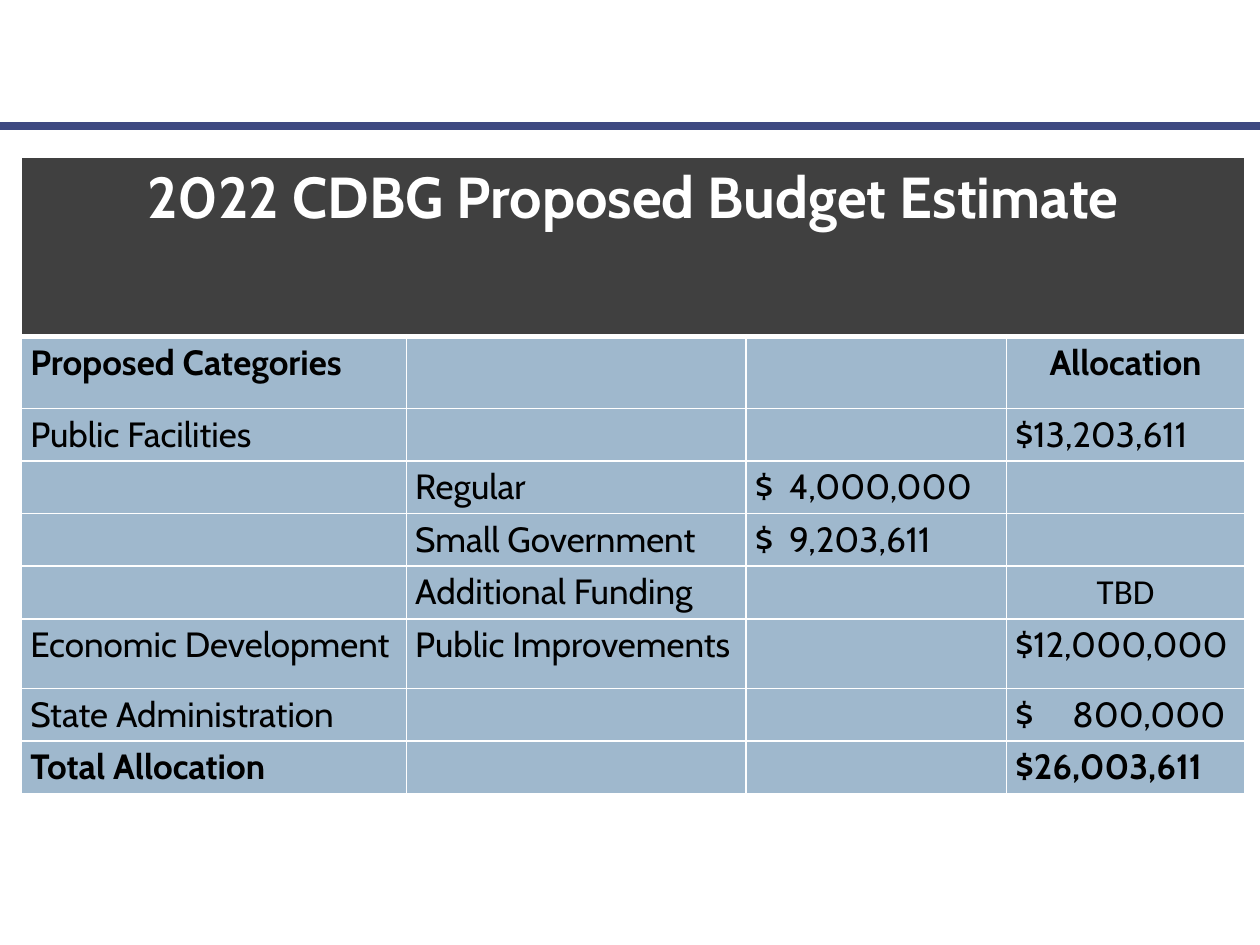
from typing import NamedTuple

from lxml import etree
from pptx import Presentation, util as u
from pptx.dml.color import RGBColor
from pptx.enum import shapes, text
from pptx.oxml.ns import qn

WHITE, BLACK, DARK, BLUE, NAVY = "FFFFFF", "000000", "404040", "9FB8CD", "3E4981"
MID = text.PP_ALIGN.CENTER


class Item(NamedTuple):
    words: str
    bold: bool = False
    align: text.PP_ALIGN = text.PP_ALIGN.LEFT
    font: str = "Cabin"
    size: int = 20
    color: str = BLACK
    tab: float = 0  # tab stop in cm


class Row(NamedTuple):
    high: float
    items: dict[int, Item]  # keyed by column


COLS = [7.76, 6.85, 5.25, 4.8]
LOW = 1.04
ROWS = [
    Row(3.6, {0: Item("2022 CDBG Proposed Budget Estimate", True, MID,
                      size=33, color=WHITE)}),
    Row(1.45, {0: Item("Proposed Categories", True),
               3: Item("Allocation", True, MID)}),
    Row(LOW, {0: Item("Public Facilities"), 3: Item("$13,203,611")}),
    Row(LOW, {1: Item("Regular"), 2: Item("$\t4,000,000", tab=0.69)}),
    Row(LOW, {1: Item("Small Government"), 2: Item("$\t9,203,611", tab=0.69)}),
    Row(1, {1: Item("Additional Funding"),
            3: Item("TBD", align=MID, font="Calibri")}),
    Row(1.4, {0: Item("Economic Development"), 1: Item("Public Improvements"),
              3: Item("$12,000,000")}),
    Row(LOW, {0: Item("State Administration"),
              3: Item("$\t800,000", tab=1.15)}),
    Row(LOW, {0: Item("Total Allocation", True), 3: Item("$26,003,611", True)}),
]


def paint(code: str) -> RGBColor:
    return RGBColor.from_string(code)


def write(frame, words: str, *, bold: bool, align, font: str, size: int,
          color: str, tab: float) -> None:
    para = frame.paragraphs[0]
    para.alignment = align
    if tab:
        stops = etree.SubElement(para._p.get_or_add_pPr(), qn("a:tabLst"))
        etree.SubElement(stops, qn("a:tab"), pos=str(u.Cm(tab)), algn="l")
    run = para.add_run()
    run.text = words
    face = run.font
    face.name, face.size, face.bold = font, u.Pt(size), bold
    face.color.rgb = paint(color)


def edge(cell, side: str, width: float) -> None:
    line = etree.SubElement(cell._tc.get_or_add_tcPr(), qn(f"a:ln{side}"),
                            w=str(u.Pt(width)))
    fill = etree.SubElement(line, qn("a:solidFill"))
    etree.SubElement(fill, qn("a:srgbClr"), val=WHITE)


def style(cell, row: int) -> None:
    cell.margin_left = cell.margin_right = u.Cm(0.18)
    cell.margin_top = cell.margin_bottom = u.Cm(0.1)
    # A thick rule parts the title from the body
    thick = {(0, "B"), (1, "T")}
    for side in "LRTB":
        edge(cell, side, 3 if (row, side) in thick else 1)
    cell.fill.solid()
    cell.fill.fore_color.rgb = paint(BLUE if row else DARK)


def rule(slide, top: float, wide: float) -> None:
    line = slide.shapes.add_connector(
        shapes.MSO_CONNECTOR.STRAIGHT, 0, u.Cm(top), u.Cm(wide), u.Cm(top))
    line.line.color.rgb = paint(NAVY)
    line.line.width = u.Pt(4.5)
    etree.SubElement(line._element.spPr, qn("a:effectLst"))


def budget(slide, left: float, top: float) -> None:
    high = sum(row.high for row in ROWS)
    table = slide.shapes.add_table(
        len(ROWS), len(COLS), u.Cm(left), u.Cm(top),
        u.Cm(sum(COLS)), u.Cm(high)).table
    table.first_row = table.horz_banding = False
    for col, wide in zip(table.columns, COLS):
        col.width = u.Cm(wide)
    for r, row in enumerate(ROWS):
        table.rows[r].height = u.Cm(row.high)
        for c in range(len(COLS)):
            cell = table.cell(r, c)
            style(cell, r)
            if c in row.items:
                write(cell.text_frame, **row.items[c]._asdict())
    table.cell(0, 0).merge(table.cell(0, len(COLS) - 1))


def main() -> None:
    deck = Presentation()
    deck.slide_width, deck.slide_height = u.Cm(25.4), u.Cm(19.05)
    slide = deck.slides.add_slide(deck.slide_layouts[6])
    # Header rule
    rule(slide, 2.54, 25.4)
    # Budget table
    budget(slide, 0.43, 3.18)
    deck.save("out.pptx")


if __name__ == "__main__":
    main()
